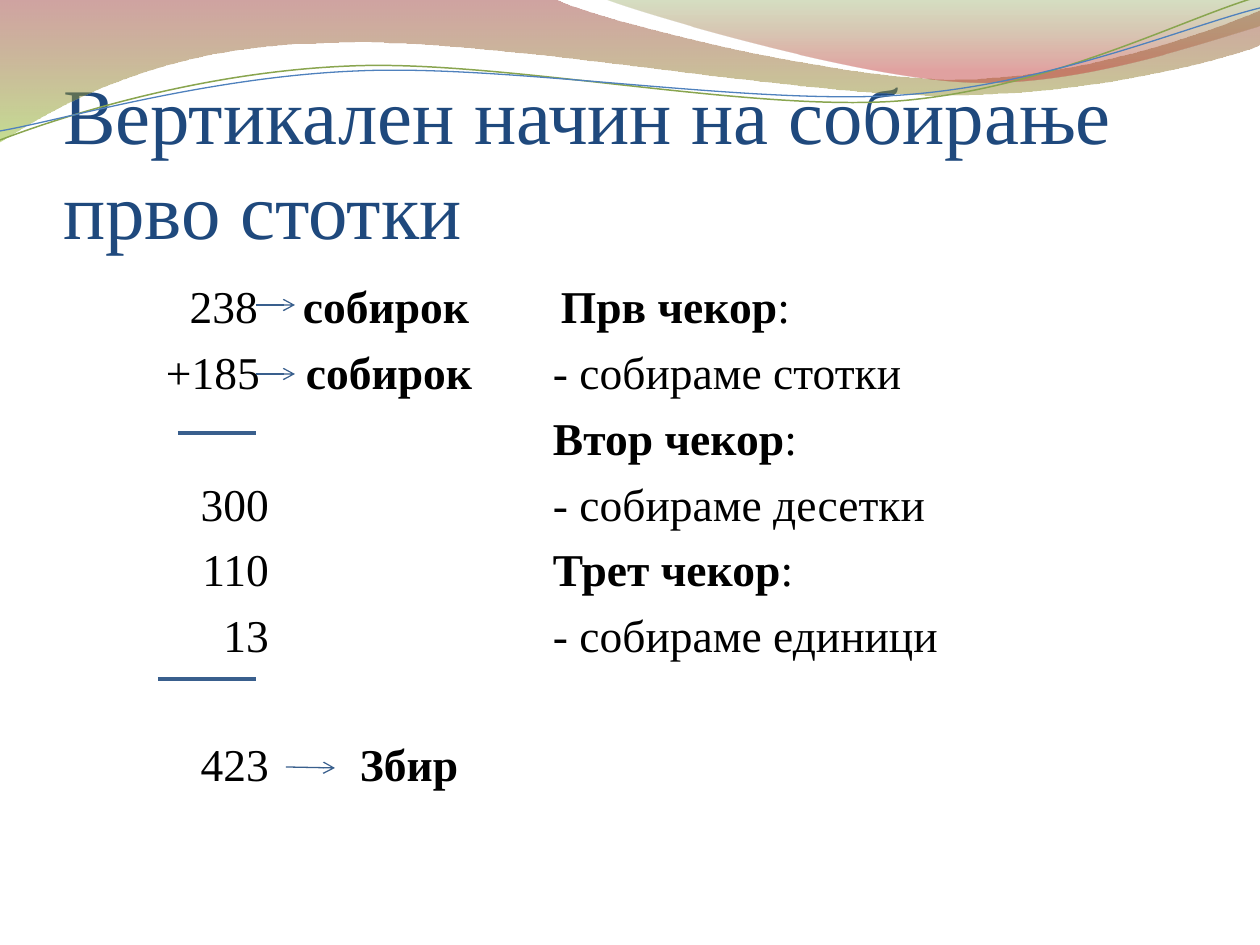
import pptx
import pptx.dml.color
import pptx.enum.text
import pptx.oxml
import pptx.oxml.ns
import pptx.util
from lxml import etree

EMU_PER_PX = 914400 / 126
qn = pptx.oxml.ns.qn


def px(length):
    return pptx.util.Emu(round(length * EMU_PER_PX))


def color(value):
    return pptx.dml.color.RGBColor.from_string(value)


class SlideBuilder:
    font = "Times New Roman"
    title_color = "1F497D"
    text_color = "000000"
    rule_color = "395F8D"
    title_size = 45
    text_size = 26
    row_gap = 6.4
    row_pitch = 36.3

    def __init__(self, slide):
        self.slide = slide

    def style(self, font, size, ink, bold=False):
        font.name = self.font
        font.size = pptx.util.Pt(size)
        font.bold = bold
        font.color.rgb = color(ink)

    def title(self, text, left, top, width, height):
        heading = self.slide.shapes.title
        heading.left, heading.top = px(left), px(top)
        heading.width, heading.height = px(width), px(height)
        frame = heading.text_frame
        frame.word_wrap = True
        frame.auto_size = pptx.enum.text.MSO_AUTO_SIZE.NONE
        frame.vertical_anchor = pptx.enum.text.MSO_ANCHOR.BOTTOM
        frame.margin_left = frame.margin_right = frame.margin_bottom = 0
        frame.margin_top = px(6)
        paragraph = frame.paragraphs[0]
        paragraph.alignment = pptx.enum.text.PP_ALIGN.LEFT
        run = paragraph.add_run()
        run.text = text
        self.style(run.font, self.title_size, self.title_color)

    def curve(self, start, segments, closed):
        points = [point for segment in segments for point in segment]
        builder = self.slide.shapes.build_freeform(*start, scale=EMU_PER_PX)
        builder.add_line_segments(points, close=closed)
        shape = builder.convert_to_shape()
        shape.shadow.inherit = False
        steps = iter(list(shape._element.iter(qn("a:lnTo"))))
        for segment in segments:
            parts = [next(steps) for _ in segment]
            if len(parts) == 3:
                bezier = etree.Element(qn("a:cubicBezTo"))
                parts[0].addprevious(bezier)
                for part in parts:
                    bezier.append(part[0])
                    part.getparent().remove(part)
        return shape

    def band(self, start, segments, stops):
        shape = self.curve(start, segments, True)
        shape.line.fill.background()
        shape.fill.gradient()
        shape.fill.gradient_angle = 270
        for stop, (position, tint, opacity) in zip(shape.fill.gradient_stops, stops):
            stop.position = position
            stop.color.rgb = color(tint)
        for tint, stop in zip(shape._element.spPr.iter(qn("a:srgbClr")), stops):
            etree.SubElement(tint, qn("a:alpha"), val=str(stop[2] * 1000))

    def wave(self, start, segments, ink, weight):
        shape = self.curve(start, segments, False)
        shape.fill.background()
        shape.line.color.rgb = color(ink)
        shape.line.width = pptx.util.Pt(weight)

    def rows(self, rows, left, top, width, height):
        inset = 12
        frame = self.slide.shapes.add_textbox(px(left), px(top), px(width), px(height)).text_frame
        frame.word_wrap = True
        frame.margin_left = px(inset)
        for index, (skipped, cells) in enumerate(rows):
            paragraph = frame.paragraphs[0] if index == 0 else frame.add_paragraph()
            if index:
                paragraph.space_before = pptx.util.Pt(self.row_gap + skipped * self.row_pitch)
            tabs = etree.SubElement(paragraph._p.get_or_add_pPr(), qn("a:tabLst"))
            for x, align, runs in cells:
                etree.SubElement(tabs, qn("a:tab"), pos=str(px(x - left - inset)), algn=align)
                for position, (text, bold) in enumerate(runs):
                    run = paragraph.add_run()
                    run.text = text if position else "\t" + text
                    self.style(run.font, self.text_size, self.text_color, bold)

    def line(self, x1, y1, x2, y2, weight, arrow=False):
        connector = self.slide.shapes.add_connector(
            pptx.enum.shapes.MSO_CONNECTOR.STRAIGHT, px(x1), px(y1), px(x2), px(y2))
        connector.line.color.rgb = color(self.rule_color)
        connector.line.width = pptx.util.Pt(weight)
        if arrow:
            etree.SubElement(connector.line._get_or_add_ln(), qn("a:tailEnd"), type="arrow")
        etree.SubElement(connector._element.spPr, qn("a:effectLst"))


def number(edge, text):
    return edge, "r", [(text, False)]


def label(x, text):
    return x, "l", [(text, True)]


def step(x, text):
    return x, "l", [(text, True), (":", False)]


def action(x, text):
    return x, "l", [("- " + text, False)]


def main():
    presentation = pptx.Presentation()
    presentation.slide_width, presentation.slide_height = px(1260), px(945)
    page = SlideBuilder(presentation.slides.add_slide(presentation.slide_layouts[5]))

    page.band((0, 0), [
        [(554, -1)],
        [(600, 21), (837, 79), (955, 79)],
        [(1075, 79), (1207, 33), (1260, 11)],
        [(1261, 45)],
        [(1239, 55), (1096, 96), (940, 95)],
        [(784, 95), (481, 35), (324, 43)],
        [(163, 45), (58, 105), (-1, 142)],
    ], [(0, "973330", 45), (1, "95C238", 55)])
    page.band((604, -1), [
        [(641, 14), (859, 78), (969, 82)],
        [(1079, 87), (1211, 40), (1260, 26)],
        [(1260, 0)],
    ], [(0, "769537", 30), (0.8, "BE3330", 45)])
    page.wave((0, 140), [
        [(60, 117), (199, 72), (349, 66)],
        [(498, 59), (747, 112), (898, 101)],
        [(1049, 89), (1182, 19), (1257, -3)],
    ], "89A54F", 0.85)
    page.wave((0, 131), [
        [(59, 121), (207, 77), (357, 71)],
        [(508, 64), (752, 106), (903, 95)],
        [(1053, 84), (1187, 26), (1260, 8)],
    ], "4F81BD", 0.75)

    page.title("Вертикален начин на собирање прво стотки", 63, 97, 1134, 158)
    page.rows([
        (0, [number(258, "238"), label(303, "собирок"), step(561, "Прв чекор")]),
        (0, [number(260, "+185"), label(306, "собирок"), action(553, "собираме стотки")]),
        (0, [step(553, "Втор чекор")]),
        (0, [number(269, "300"), action(553, "собираме десетки")]),
        (0, [number(269, "110"), step(553, "Трет чекор")]),
        (0, [number(269, "13"), action(553, "собираме единици")]),
        (1, [number(269, "423"), label(360, "Збир")]),
    ], 63, 272, 1134, 600)

    for y in (305, 374):
        page.line(256, y, 295, y, 0.75, arrow=True)
    page.line(286, 767, 335, 768, 0.75, arrow=True)
    for left, y in ((178, 433), (158, 679)):
        page.line(left, y, 256, y, 2.25)

    presentation.save("out.pptx")


if __name__ == "__main__":
    main()
